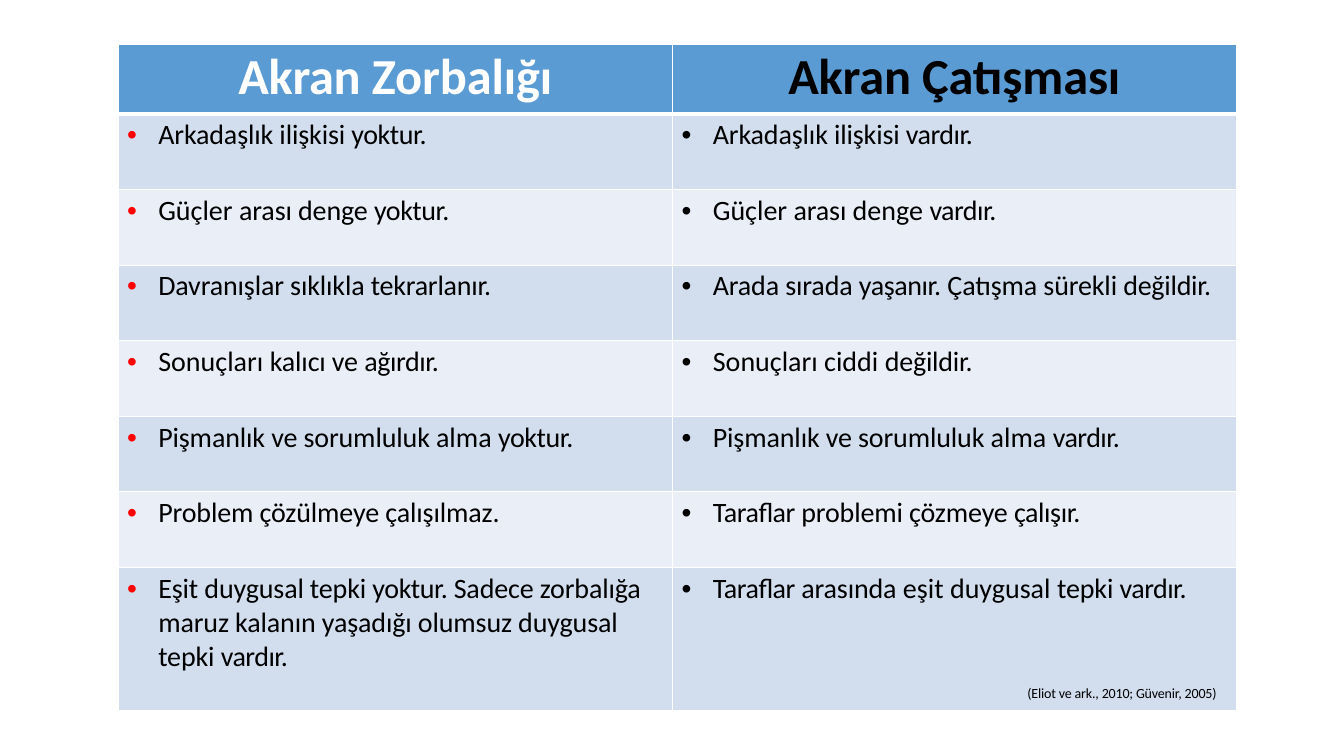
from dataclasses import dataclass
from typing import NamedTuple, Optional

from lxml import etree
from pptx import Presentation, util as u
from pptx.dml.color import RGBColor
from pptx.enum import text
from pptx.oxml import ns

PX = 9144


def px(length: int) -> u.Emu:
    return u.Emu(length * PX)


@dataclass(frozen=True)
class Theme:
    font: str = "Calibri"
    header_fill: str = "5B9BD4"
    bands: tuple[str, str] = ("D2DEEE", "EAEEF7")
    border: str = "FFFFFF"
    ink: str = "000000"
    bullying_title: str = "FFFFFF"
    bullying_bullet: str = "FF0000"
    title_size: int = 36
    body_size: int = 20
    citation_size: int = 10


THEME = Theme()


class Span(NamedTuple):
    words: str
    tracking: int


@dataclass(frozen=True)
class Comparison:
    bullying: tuple[Span, ...]
    conflict: tuple[Span, ...]
    height: int = 75


TITLES = Comparison(
    (Span("Akran ", -20), Span("Zorbalığı", -10)),
    (Span("Akran Çatışması", -10),),
    69,
)
COMPARISONS = (
    Comparison(
        (Span("Arkadaşlık ilişkisi ", -10), Span("yoktur.", -30)),
        (Span("Arkadaşlık ilişkisi ", -10), Span("vardır.", -40)),
    ),
    Comparison(
        (Span("Güçler ", 0), Span("arası denge ", -10), Span("yoktur.", -30)),
        (Span("Güçler", 0), Span(" arası", -10), Span(" denge ", 0), Span("vardır.", -40)),
    ),
    Comparison(
        (Span("Davranışlar sıklıkla ", -10), Span("tekrarlanır.", -20)),
        (Span("Arada sırada ", -10), Span("yaşanır.", -30),
         Span(" Çatışma sürekli ", -10), Span("değildir.", -20)),
    ),
    Comparison(
        (Span("Sonuçları ", 0), Span("kalıcı ve ", -10), Span("ağırdır.", -30)),
        (Span("Sonuçları ciddi ", 0), Span("değildir.", -20)),
    ),
    Comparison(
        (Span("Pişmanlık ve sorumluluk ", -10), Span("alma ", 0), Span("yoktur.", -30)),
        (Span("Pişmanlık ve sorumluluk", -10), Span(" alma ", 0), Span("vardır.", -40)),
    ),
    Comparison(
        (Span("Problem çözülmeye çalışılmaz.", -10),),
        (Span("Taraflar ", -30), Span("problemi çözmeye ", -10), Span("çalışır.", -30)),
    ),
    Comparison(
        (Span("Eşit duygusal tepki ", -10), Span("yoktur. ", -30),
         Span("Sadece zorbalığa maruz kalanın yaşadığı olumsuz duygusal tepki ", -10),
         Span("vardır.", -40)),
        (Span("Taraflar ", -30), Span("arasında", -10), Span(" eşit duygusal ", 0),
         Span("tepki ", -10), Span("vardır.", -40)),
        142,
    ),
)
CITATION = (Span("(Eliot ve ark., 2010; Güvenir, 2005)", -10),)
COLUMN_WIDTHS = (550, 559)


def add_spans(paragraph, spans: tuple[Span, ...], size: int, colour: str,
              bold: bool = False) -> None:
    for span in spans:
        run = paragraph.add_run()
        run.text = span.words
        run.font.name = THEME.font
        run.font.size = u.Pt(size)
        run.font.bold = bold
        run.font.color.rgb = RGBColor.from_string(colour)
        run._r.get_or_add_rPr().set("spc", str(span.tracking))


def indent(paragraph, margin: int, first_line: int, bullet: Optional[str] = None) -> None:
    properties = paragraph._p.get_or_add_pPr()
    properties.set("marL", str(px(margin)))
    properties.set("indent", str(px(first_line)))
    if bullet:
        bullet_colour = etree.SubElement(properties, ns.qn("a:buClr"))
        etree.SubElement(bullet_colour, ns.qn("a:srgbClr"), val=bullet)
        etree.SubElement(properties, ns.qn("a:buFont"), typeface="Arial")
        etree.SubElement(properties, ns.qn("a:buChar"), char="•")


def style_cell(cell, fill: str, inset_top: int, top: int = 1, bottom: int = 1) -> None:
    properties = cell._tc.get_or_add_tcPr()
    for side, points in (("L", 1), ("R", 1), ("T", top), ("B", bottom)):
        edge = etree.SubElement(properties, ns.qn(f"a:ln{side}"), w=str(u.Pt(points)))
        paint = etree.SubElement(edge, ns.qn("a:solidFill"))
        etree.SubElement(paint, ns.qn("a:srgbClr"), val=THEME.border)
    cell.fill.solid()
    cell.fill.fore_color.rgb = RGBColor.from_string(fill)
    cell.margin_left = cell.margin_right = cell.margin_bottom = 0
    cell.margin_top = px(inset_top)


def draw_title(cell, spans: tuple[Span, ...], colour: str) -> None:
    style_cell(cell, THEME.header_fill, 2, bottom=3)
    paragraph = cell.text_frame.paragraphs[0]
    paragraph.alignment = text.PP_ALIGN.CENTER
    add_spans(paragraph, spans, THEME.title_size, colour, bold=True)


def draw_point(cell, spans: tuple[Span, ...], bullet: str, row: int) -> None:
    style_cell(cell, THEME.bands[(row - 1) % 2], 4, top=3 if row == 1 else 1)
    paragraph = cell.text_frame.paragraphs[0]
    indent(paragraph, 40, -31, bullet)
    add_spans(paragraph, spans, THEME.body_size, THEME.ink)


def draw_citation(cell) -> None:
    paragraph = cell.text_frame.add_paragraph()
    indent(paragraph, 352, 0)
    paragraph.space_before = u.Pt(57)
    add_spans(paragraph, CITATION, THEME.citation_size, THEME.ink)


def main() -> None:
    deck = Presentation()
    deck.slide_width, deck.slide_height = px(1333), px(750)
    slide = deck.slides.add_slide(deck.slide_layouts[6])
    rows = (TITLES, *COMPARISONS)
    table = slide.shapes.add_table(
        len(rows), len(COLUMN_WIDTHS), px(117), px(44),
        px(sum(COLUMN_WIDTHS)), px(sum(row.height for row in rows)),
    ).table
    for column, width in zip(table.columns, COLUMN_WIDTHS):
        column.width = px(width)
    for table_row, row in zip(table.rows, rows):
        table_row.height = px(row.height)

    draw_title(table.cell(0, 0), TITLES.bullying, THEME.bullying_title)
    draw_title(table.cell(0, 1), TITLES.conflict, THEME.ink)
    for index, comparison in enumerate(COMPARISONS, start=1):
        draw_point(table.cell(index, 0), comparison.bullying, THEME.bullying_bullet, index)
        draw_point(table.cell(index, 1), comparison.conflict, THEME.ink, index)
    draw_citation(table.cell(len(COMPARISONS), 1))
    deck.save("out.pptx")


if __name__ == "__main__":
    main()
